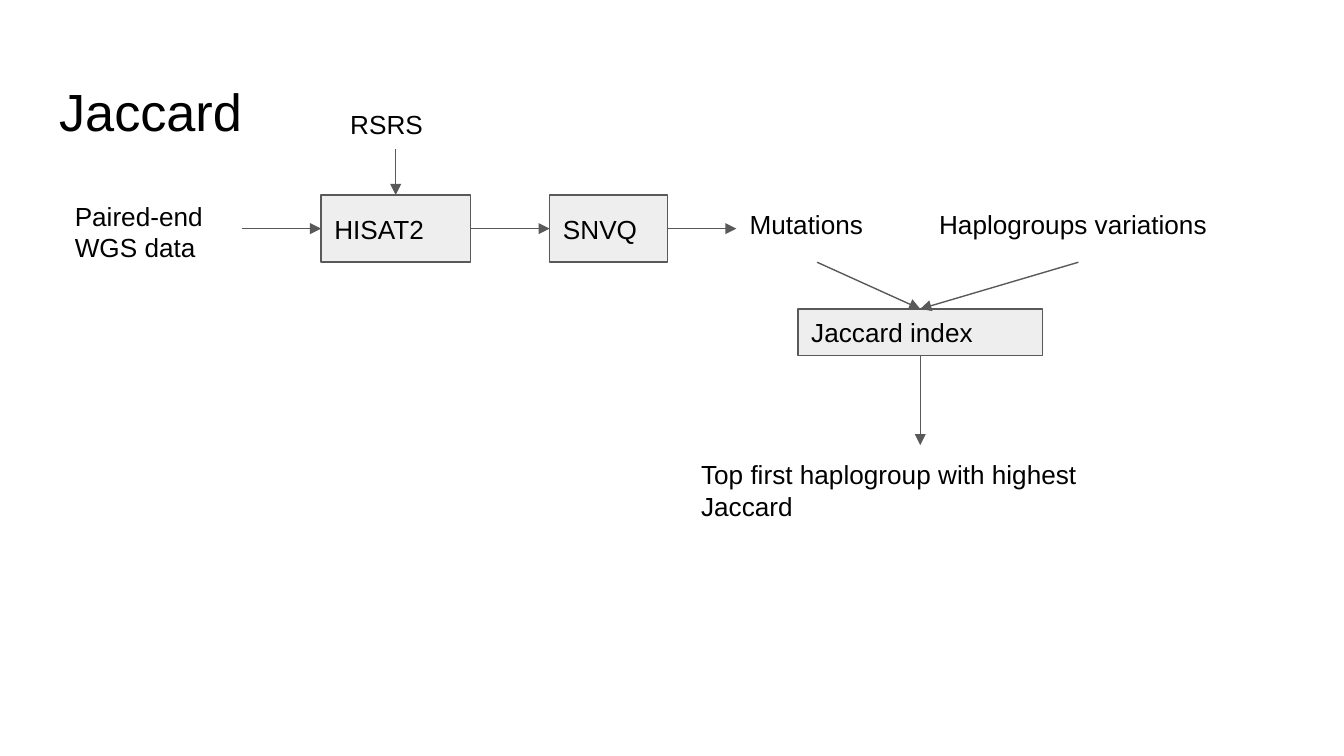
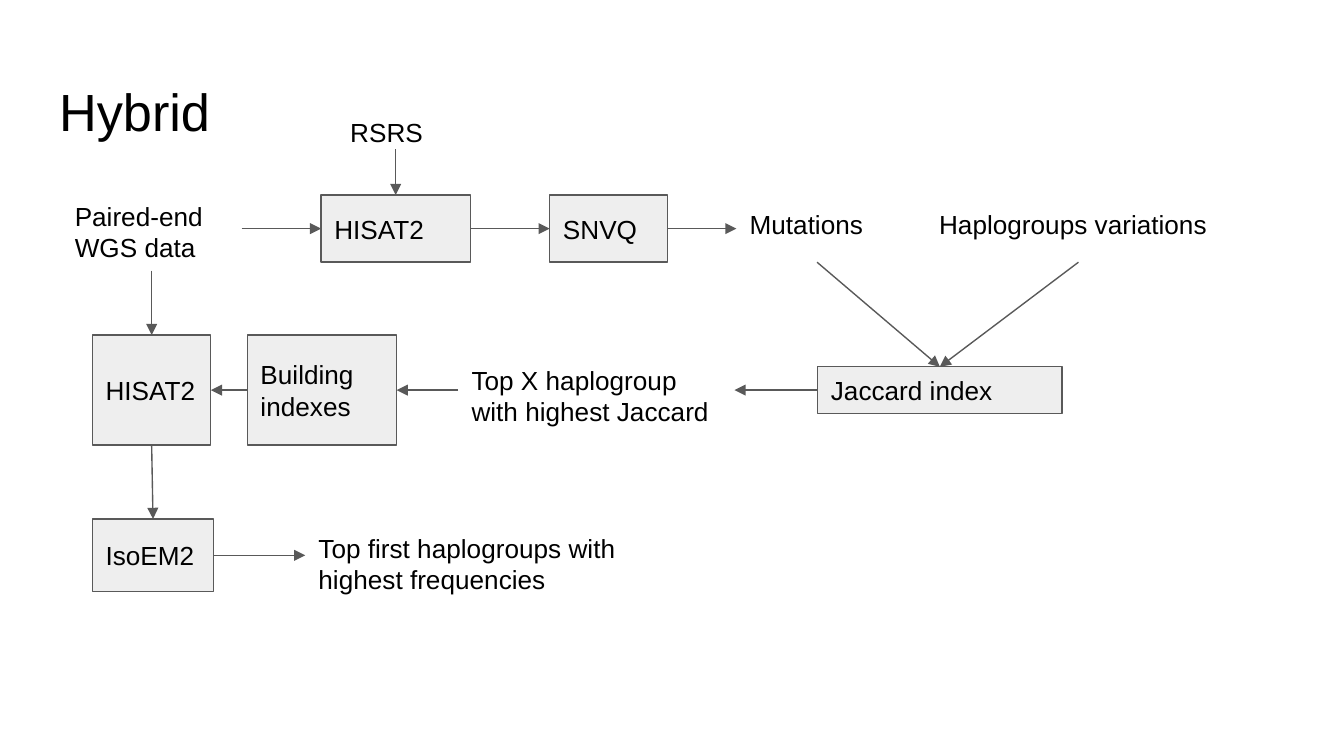
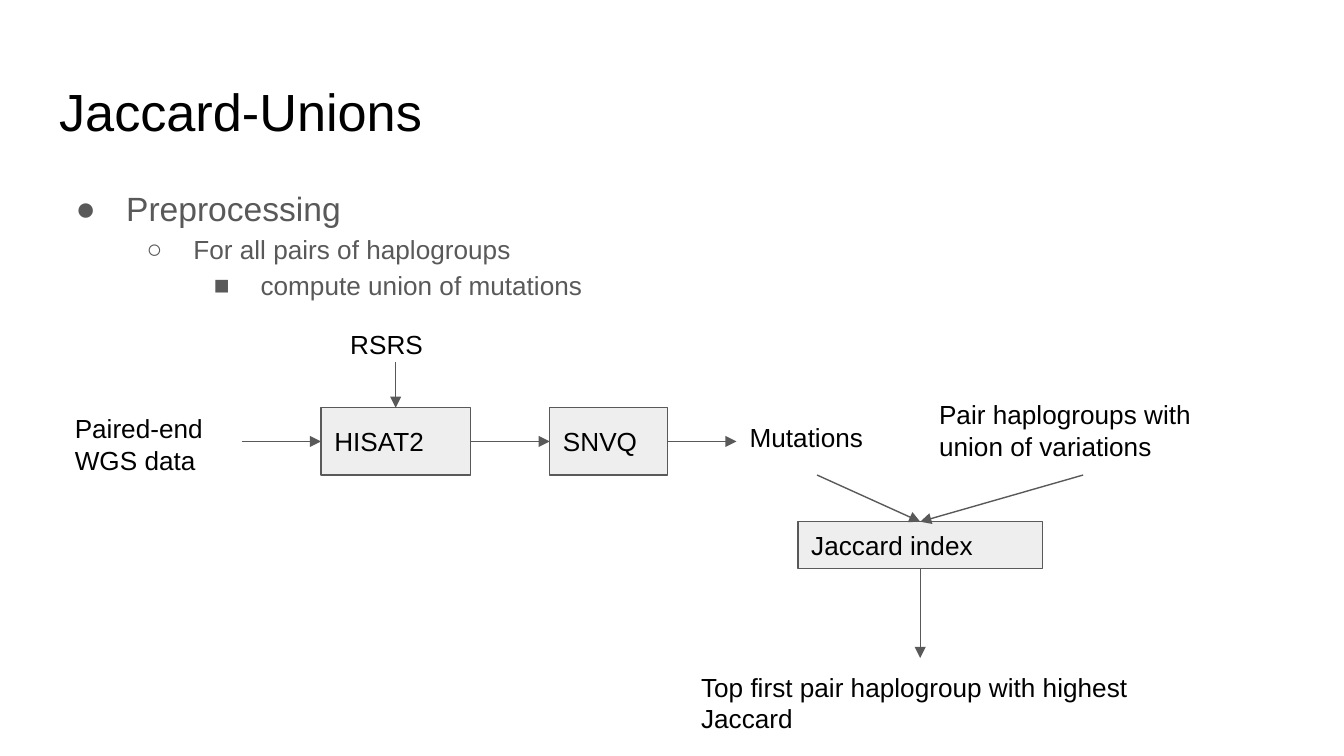
from lxml import etree
from pptx import Presentation, oxml
from pptx.dml import color
from pptx.enum import shapes, text
from pptx.oxml import ns
from pptx.util import Pt

hex_color = color.RGBColor.from_string
BLACK, GRAY, PALE = "000000", "595959", "EEEEEE"
FONT = "Arial"
INSET = Pt(7.2)
TOP, LEFT, BOTTOM, RIGHT = range(4)


def add_step(slide, label, x, y, w, h, boxed=False):
    place = Pt(x), Pt(y), Pt(w), Pt(h)
    if boxed:
        step = slide.shapes.add_shape(shapes.MSO_SHAPE.RECTANGLE, *place)
        step.shadow.inherit = False
        step.fill.solid()
        step.fill.fore_color.rgb = hex_color(PALE)
        step.line.color.rgb = hex_color(GRAY)
        step.line.width = Pt(0.75)
    else:
        step = slide.shapes.add_textbox(*place)
    frame = step.text_frame
    frame.word_wrap = True
    frame.margin_left = frame.margin_right = INSET
    frame.margin_top = frame.margin_bottom = INSET
    frame.vertical_anchor = text.MSO_ANCHOR.MIDDLE if boxed else text.MSO_ANCHOR.TOP
    frame.text = label
    for paragraph in frame.paragraphs:
        paragraph.alignment = text.PP_ALIGN.LEFT
        paragraph.font.name = FONT
        paragraph.font.size = Pt(14)
        paragraph.font.color.rgb = hex_color(BLACK)
    return step


def add_arrow(slide, source, source_side, target, target_side):
    arrow = slide.shapes.add_connector(shapes.MSO_CONNECTOR.STRAIGHT, 0, 0, 0, 0)
    arrow.begin_connect(source, source_side)
    arrow.end_connect(target, target_side)
    arrow.line.color.rgb = hex_color(GRAY)
    arrow.line.width = Pt(0.75)
    etree.SubElement(arrow.line._get_or_add_ln(), ns.qn("a:tailEnd"), type="triangle")
    etree.SubElement(arrow._element.spPr, ns.qn("a:effectLst"))


prs = Presentation()
prs.slide_width, prs.slide_height = Pt(720), Pt(405)

variations_label = "Haplogroups variations"
methods = [
    ("Jaccard", 0, 29, (variations_label, 163.5, 36), (427.5, 165.5),
     ("Top first haplogroup with highest Jaccard", 368.5, 238.5, 249, 42), BOTTOM, TOP),
    ("Hybrid", 0, 25, (variations_label, 163.5, 36), (438, 196.5),
     ("Top X haplogroup with highest Jaccard", 245.5, 188, 148, 42), LEFT, RIGHT),
    ("Jaccard-Unions", 114, 25, ("Pair haplogroups with union of variations", 168.5, 48), (427.5, 165.5),
     ("Top first pair haplogroup with highest Jaccard", 368.5, 238.5, 249, 42), BOTTOM, TOP),
]

for (name, drop, rsrs_height, (variations_text, variations_width, variations_height),
     (index_x, index_y), (result_text, result_x, result_y, result_w, result_h),
     index_side, result_side) in methods:
    slide = prs.slides.add_slide(prs.slide_layouts[5])
    title = slide.shapes.title
    title.left, title.top, title.width, title.height = Pt(24.5), Pt(35.5), Pt(671), Pt(45)
    heading = title.text_frame
    heading.text = name
    heading.auto_size = text.MSO_AUTO_SIZE.NONE
    heading.vertical_anchor = text.MSO_ANCHOR.TOP
    heading.margin_left = heading.margin_right = INSET
    heading.margin_top = heading.margin_bottom = INSET
    heading.paragraphs[0].alignment = text.PP_ALIGN.LEFT
    heading.paragraphs[0].font.name = FONT
    heading.paragraphs[0].font.size = Pt(28)
    heading.paragraphs[0].font.color.rgb = hex_color(BLACK)

    if name == "Jaccard-Unions":
        outline = ["Preprocessing", "For all pairs of haplogroups", "compute union of mutations"]
        preprocessing = add_step(slide, "\n".join(outline), 24.5, 90.5, 671, 55.5)
        for level, (paragraph, bullet, size, hang) in enumerate(zip(
                preprocessing.text_frame.paragraphs, "●○■", (18, 14, 14), (27, 25, 25))):
            paragraph.level = level
            paragraph.line_spacing = 1.15
            properties = paragraph._p.get_or_add_pPr()
            properties.set("marL", str(Pt(36 * (level + 1))))
            properties.set("indent", str(-Pt(hang)))
            bullet_color = oxml.parse_xml(
                f'<a:buClr {ns.nsdecls("a")}><a:srgbClr val="{GRAY}"/></a:buClr>')
            bullet_font = oxml.parse_xml(f'<a:buFont {ns.nsdecls("a")} typeface="{FONT}"/>')
            bullet_char = oxml.parse_xml(f'<a:buChar {ns.nsdecls("a")} char="{bullet}"/>')
            defaults = properties.find(ns.qn("a:defRPr"))
            for part in (bullet_color, bullet_font, bullet_char):
                defaults.addprevious(part)
            paragraph.font.size = Pt(size)
            paragraph.font.color.rgb = hex_color(GRAY)

    row = 104.5 + drop
    reads = add_step(slide, "Paired-end WGS data", 33, row - 4.5, 96.5, 45)
    aligner = add_step(slide, "HISAT2", 172, row, 80, 36, boxed=True)
    rsrs = add_step(slide, "RSRS", 180.5, row - 24.5 - rsrs_height, 63, rsrs_height)
    caller = add_step(slide, "SNVQ", 294.5, row, 63, 36, boxed=True)
    mutations = add_step(slide, "Mutations", 394.5, row, 86.5, 36)
    variations = add_step(slide, variations_text, 496, row + 36 - variations_height,
                          variations_width, variations_height)
    index = add_step(slide, "Jaccard index", index_x, index_y + drop, 131, 25, boxed=True)
    result = add_step(slide, result_text, result_x, result_y + drop, result_w, result_h)

    add_arrow(slide, rsrs, BOTTOM, aligner, TOP)
    for source, target in ((reads, aligner), (aligner, caller), (caller, mutations)):
        add_arrow(slide, source, RIGHT, target, LEFT)
    for source in (mutations, variations):
        add_arrow(slide, source, BOTTOM, index, TOP)
    add_arrow(slide, index, index_side, result, result_side)

    if name == "Hybrid":
        indexes = add_step(slide, "Building indexes", 132.5, 179.5, 80, 59, boxed=True)
        realigner = add_step(slide, "HISAT2", 49.5, 179.5, 63.5, 59, boxed=True)
        estimator = add_step(slide, "IsoEM2", 49.5, 278, 65, 39, boxed=True)
        frequencies = add_step(slide, "Top first haplogroups with highest frequencies",
                               163.5, 278, 193, 39)
        add_arrow(slide, result, LEFT, indexes, RIGHT)
        add_arrow(slide, indexes, LEFT, realigner, RIGHT)
        add_arrow(slide, reads, BOTTOM, realigner, TOP)
        add_arrow(slide, realigner, BOTTOM, estimator, TOP)
        add_arrow(slide, estimator, RIGHT, frequencies, LEFT)

prs.save("out.pptx")
